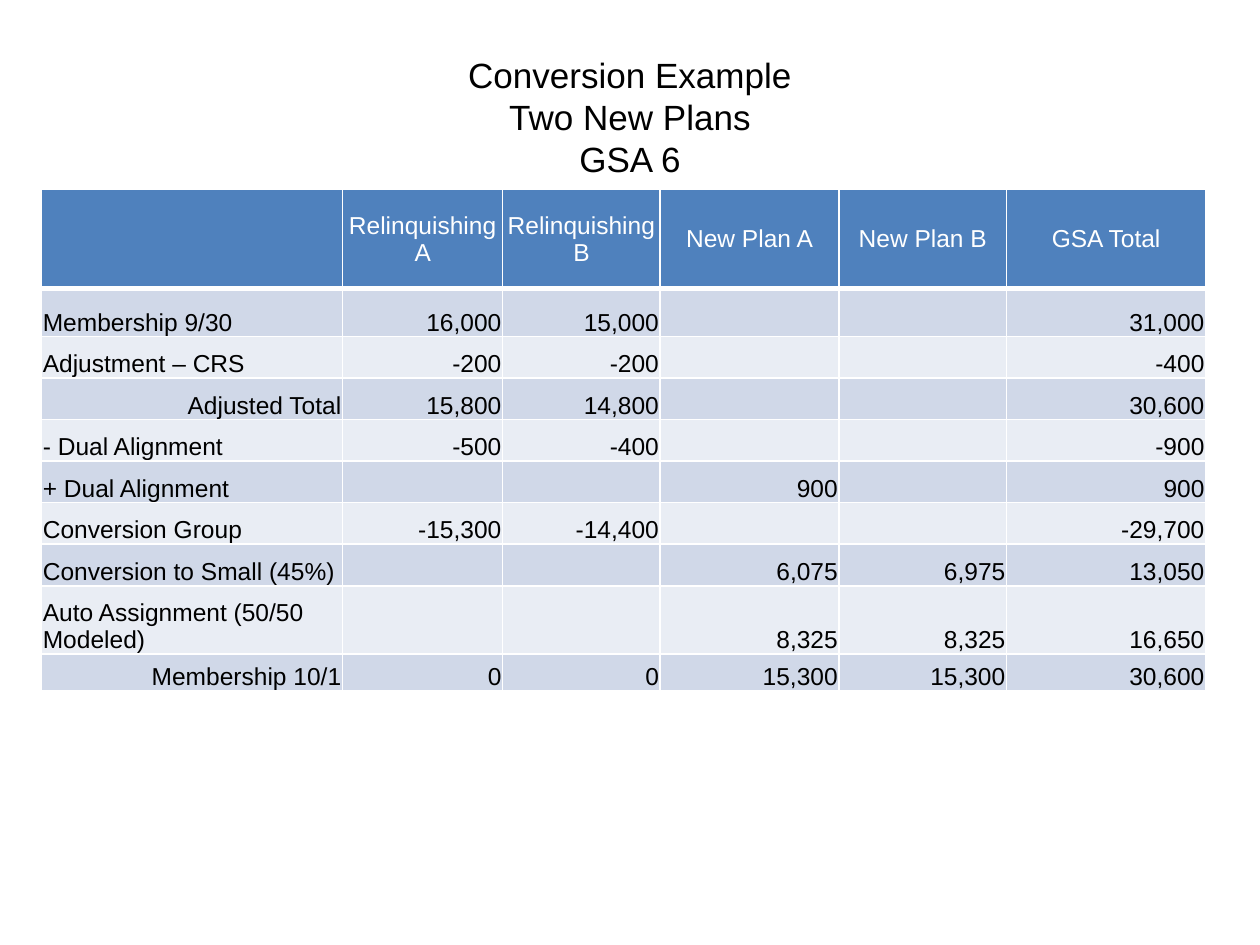
from lxml.etree import SubElement, fromstring
from pptx import Presentation
from pptx.dml.color import RGBColor
from pptx.enum.text import MSO_ANCHOR, MSO_AUTO_SIZE, PP_ALIGN
from pptx.oxml.ns import nsdecls, qn
from pptx.util import Inches, Pt

COLORS = {
    "header": "4F81BD",
    "odd_row": "D0D8E8",
    "even_row": "E9EDF4",
    "light": "FFFFFF",
    "dark": "000000",
}
FONT_NAME = "Arial"
TITLE_LINES = ["Conversion Example", "Two New Plans", "GSA 6"]
COLUMN_WIDTHS = [2.39, 1.27, 1.25, 1.42, 1.33, 1.58]
ROW_HEIGHTS = [0.79, 0.38] + [0.33] * 6 + [0.54, 0.29]
ROWS = [
    ["", "Relinquishing A", "Relinquishing B", "New Plan A", "New Plan B", "GSA Total"],
    ["Membership 9/30", "16,000", "15,000", "", "", "31,000"],
    ["Adjustment – CRS", "-200", "-200", "", "", "-400"],
    ["Adjusted Total", "15,800", "14,800", "", "", "30,600"],
    ["- Dual Alignment", "-500", "-400", "", "", "-900"],
    ["+ Dual Alignment", "", "", "900", "", "900"],
    ["Conversion Group", "-15,300", "-14,400", "", "", "-29,700"],
    ["Conversion to Small (45%)", "", "", "6,075", "6,975", "13,050"],
    ["Auto Assignment (50/50 Modeled)", "", "", "8,325", "8,325", "16,650"],
    ["Membership 10/1", "0", "0", "15,300", "15,300", "30,600"],
]
TOTAL_LABELS = {"Adjusted Total", "Membership 10/1"}


def add_run(paragraph, text, size, color):
    run = paragraph.add_run()
    run.text = text
    run.font.name = FONT_NAME
    run.font.size = Pt(size)
    run.font.color.rgb = RGBColor.from_string(COLORS[color])


def add_title(slide):
    title = slide.shapes.title
    title.left, title.top = Inches(0.5), Inches(0.3)
    title.width, title.height = Inches(9), Inches(1.25)
    frame = title.text_frame
    frame.auto_size = MSO_AUTO_SIZE.NONE
    frame.vertical_anchor = MSO_ANCHOR.MIDDLE
    paragraph = frame.paragraphs[0]
    paragraph.alignment = PP_ALIGN.CENTER
    for index, line in enumerate(TITLE_LINES):
        if index:
            paragraph.add_line_break()
        add_run(paragraph, line, 20, "dark")


def set_borders(cell, row_index):
    properties = cell._tc.get_or_add_tcPr()
    widths = {"lnL": 1, "lnR": 1, "lnT": 1, "lnB": 1}
    if row_index == 0:
        widths["lnB"] = 3
    elif row_index == 1:
        widths["lnT"] = 3
    for position, (side, width) in enumerate(widths.items()):
        border = fromstring(f'<a:{side} {nsdecls("a")} w="{Pt(width)}"/>')
        fill = SubElement(border, qn("a:solidFill"))
        SubElement(fill, qn("a:srgbClr"), val=COLORS["light"])
        properties.insert(position, border)


def cell_alignment(row_index, column_index, text):
    if row_index == 0:
        return PP_ALIGN.CENTER
    if column_index == 0 and text not in TOTAL_LABELS:
        return PP_ALIGN.LEFT
    return PP_ALIGN.RIGHT


def format_cell(cell, row_index, column_index, text):
    is_header = row_index == 0
    fill_name = "header" if is_header else "odd_row" if row_index % 2 else "even_row"
    cell.fill.solid()
    cell.fill.fore_color.rgb = RGBColor.from_string(COLORS[fill_name])
    set_borders(cell, row_index)
    cell.margin_left = cell.margin_right = cell.margin_top = Inches(0.01)
    cell.margin_bottom = 0
    cell.vertical_anchor = MSO_ANCHOR.MIDDLE if is_header else MSO_ANCHOR.BOTTOM
    if text:
        paragraph = cell.text_frame.paragraphs[0]
        paragraph.alignment = cell_alignment(row_index, column_index, text)
        add_run(paragraph, text, 14, "light" if is_header else "dark")


def add_membership_table(slide):
    shape = slide.shapes.add_table(
        len(ROWS), len(COLUMN_WIDTHS),
        Inches(0.33), Inches(1.5), Inches(sum(COLUMN_WIDTHS)), Inches(sum(ROW_HEIGHTS)),
    )
    table = shape.table
    for column, width in zip(table.columns, COLUMN_WIDTHS):
        column.width = Inches(width)
    for row, height in zip(table.rows, ROW_HEIGHTS):
        row.height = Inches(height)
    for row_index, values in enumerate(ROWS):
        for column_index, text in enumerate(values):
            format_cell(table.cell(row_index, column_index), row_index, column_index, text)


def main():
    presentation = Presentation()
    presentation.slide_width = Inches(10)
    presentation.slide_height = Inches(7.5)
    slide = presentation.slides.add_slide(presentation.slide_layouts[5])
    add_title(slide)
    add_membership_table(slide)
    presentation.save("out.pptx")


if __name__ == "__main__":
    main()
